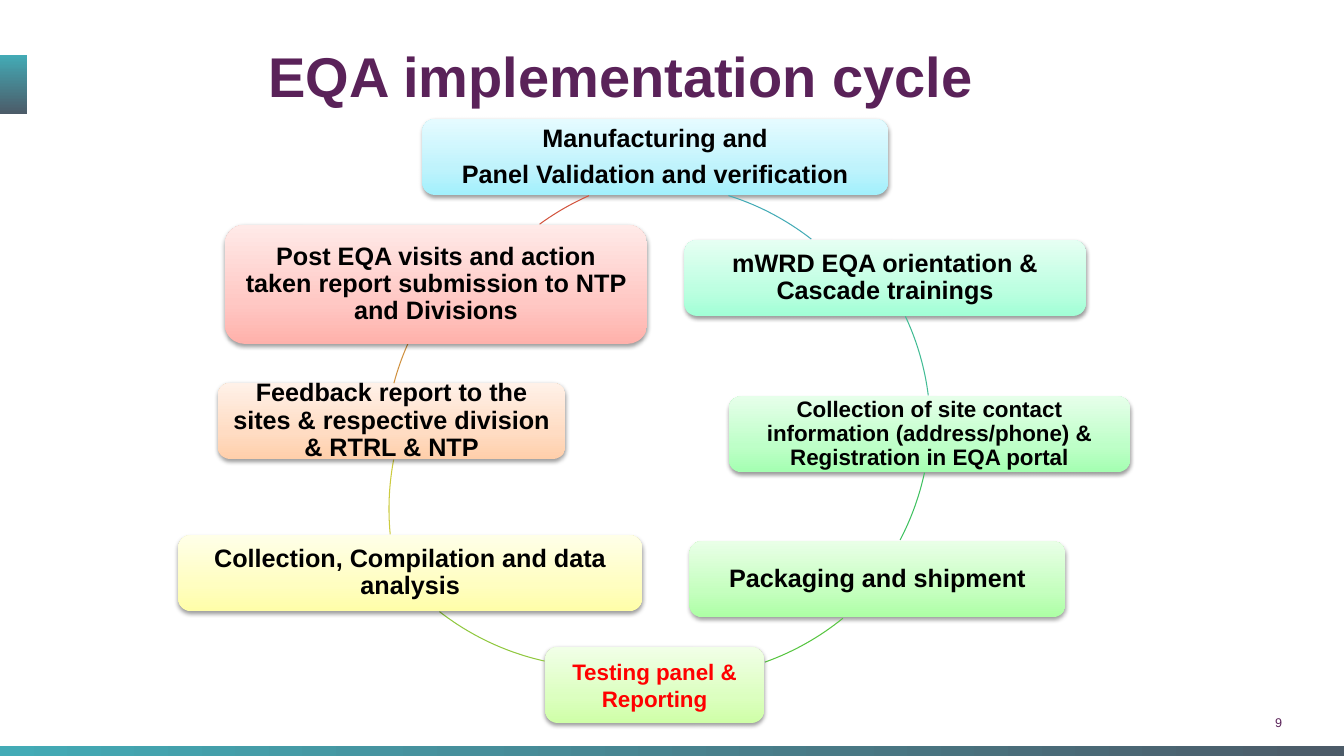
from copy import deepcopy

from lxml.etree import SubElement
from pptx import Presentation
from pptx.dml.color import RGBColor
from pptx.enum.shapes import MSO_SHAPE
from pptx.enum.text import MSO_ANCHOR, MSO_AUTO_SIZE, PP_ALIGN
from pptx.oxml.ns import qn
from pptx.util import Pt

PURPLE = RGBColor(0x5A, 0x22, 0x59)
TEAL = RGBColor(0x43, 0xAB, 0xB6)
SLATE = RGBColor(0x4C, 0x5B, 0x68)
BLACK = RGBColor(0x00, 0x00, 0x00)
RED = RGBColor(0xFF, 0x00, 0x00)

AQUA_FILL = [RGBColor(0xA2, 0xF0, 0xFC), RGBColor(0xBF, 0xF3, 0xFC), RGBColor(0xE5, 0xFB, 0xFF)]
MINT_FILL = [RGBColor(0xA2, 0xFF, 0xD6), RGBColor(0xBD, 0xFF, 0xE1), RGBColor(0xE6, 0xFF, 0xF3)]
GREEN_FILL = [RGBColor(0xA4, 0xFF, 0xB1), RGBColor(0xBE, 0xFF, 0xC8), RGBColor(0xE6, 0xFF, 0xEA)]
LEAF_FILL = [RGBColor(0xAD, 0xFF, 0xA5), RGBColor(0xC5, 0xFF, 0xBF), RGBColor(0xE9, 0xFF, 0xE7)]
LIME_FILL = [RGBColor(0xCF, 0xFF, 0xA7), RGBColor(0xDC, 0xFF, 0xC0), RGBColor(0xF1, 0xFF, 0xE7)]
YELLOW_FILL = [RGBColor(0xFF, 0xFE, 0xA8), RGBColor(0xFF, 0xFE, 0xC1), RGBColor(0xFF, 0xFF, 0xE8)]
ORANGE_FILL = [RGBColor(0xFF, 0xCF, 0xAA), RGBColor(0xFF, 0xDC, 0xC3), RGBColor(0xFF, 0xF1, 0xE8)]
ROSE_FILL = [RGBColor(0xFF, 0xB1, 0xAB), RGBColor(0xFF, 0xC8, 0xC4), RGBColor(0xFF, 0xEA, 0xE8)]

SEA_LINE = RGBColor(0x41, 0xBC, 0x94)
GREEN_LINE = RGBColor(0x3F, 0xC1, 0x60)
LEAF_LINE = RGBColor(0x56, 0xC5, 0x3F)
LIME_LINE = RGBColor(0x90, 0xC8, 0x3F)
YELLOW_LINE = RGBColor(0xCC, 0xCB, 0x3F)
ORANGE_LINE = RGBColor(0xD0, 0x91, 0x3F)
ROSE_LINE = RGBColor(0xD3, 0x55, 0x3F)

STAGE_HEIGHT = 54.3
STAGE_STOPS = (0, 0.35, 1)
RING_SIZE = 377.3

STAGES = [
    ("Manufacturing and\nPanel Validation and verification",
     (301.7, 85, 332.6, STAGE_HEIGHT), AQUA_FILL, {}),
    ("mWRD EQA orientation & Cascade trainings",
     (488.9, 171.4, 286.6, STAGE_HEIGHT), MINT_FILL, {}),
    ("Collection of site contact information (address/phone) & Registration in EQA portal",
     (520.6, 283, 286.6, STAGE_HEIGHT), GREEN_FILL, {"size": 16}),
    ("Packaging and shipment",
     (492.5, 386.6, 268.6, STAGE_HEIGHT), LEAF_FILL, {}),
    ("Testing panel & Reporting",
     (389.5, 462.2, 156.2, STAGE_HEIGHT), LIME_FILL, {"size": 16, "color": RED, "spacing": 1.0}),
    ("Collection, Compilation and data analysis",
     (127.4, 382.3, 331.2, STAGE_HEIGHT), YELLOW_FILL, {}),
    ("Feedback report to the sites & respective division & RTRL & NTP",
     (155.5, 273.6, 248.4, STAGE_HEIGHT), ORANGE_FILL, {}),
    ("Post EQA visits and action taken report submission to NTP and Divisions",
     (160.6, 160.6, 301.7, 85), ROSE_FILL, {}),
]

ARCS = [
    (275, 131, 287.5, 307.9, TEAL),
    (287.3, 117.4, 334.9, 352.8, SEA_LINE),
    (287.3, 109.4, 12.1, 27.7, GREEN_LINE),
    (294.5, 106.6, 50.9, 70.4, LEAF_LINE),
    (241.2, 99.4, 102.5, 127.9, LIME_LINE),
    (277.9, 175, 174.5, 190.8, YELLOW_LINE),
    (275, 133.9, 195, 204.1, ORANGE_LINE),
    (308.2, 123.8, 233.8, 246.2, ROSE_LINE),
]


class CycleSlide:
    """Draws the parts of a cycle diagram on one slide in a shared style."""

    font_name = "Arial"

    def __init__(self, slide):
        self.slide = slide

    def set_text(self, frame, text, size, color, align, bold=True, spacing=1.0, after=0):
        frame.text = text
        for paragraph in frame.paragraphs:
            paragraph.alignment = align
            paragraph.line_spacing = spacing
            paragraph.space_after = Pt(after)
            font = paragraph.font
            font.name, font.size, font.bold = self.font_name, Pt(size), bold
            font.color.rgb = color

    def inset(self, frame, margin):
        frame.margin_left = frame.margin_right = Pt(margin)
        frame.margin_top = frame.margin_bottom = Pt(margin)

    def title(self, text, box):
        heading = self.slide.shapes.title
        heading.left, heading.top, heading.width, heading.height = map(Pt, box)
        frame = heading.text_frame
        frame.auto_size = MSO_AUTO_SIZE.NONE
        frame.vertical_anchor = MSO_ANCHOR.MIDDLE
        self.inset(frame, 7.2)
        self.set_text(frame, text, 40, PURPLE, PP_ALIGN.CENTER)

    def page_number(self, text, box):
        frame = self.slide.shapes.add_textbox(*map(Pt, box)).text_frame
        frame.word_wrap = False
        self.inset(frame, 0)
        self.set_text(frame, text, 9, PURPLE, PP_ALIGN.RIGHT, bold=False)

    def gradient_shape(self, preset, box, positions, colors, angle):
        shape = self.slide.shapes.add_shape(preset, *map(Pt, box))
        shape.shadow.inherit = False
        shape.line.fill.background()
        shape.fill.gradient()
        shape.fill.gradient_angle = angle
        stop_list = shape._element.spPr.find(".//" + qn("a:gsLst"))
        while len(stop_list) < len(colors):
            stop_list.append(deepcopy(stop_list[0]))
        for stop, position, color in zip(shape.fill.gradient_stops, positions, colors):
            stop.position = position
            stop.color.rgb = color
        return shape

    def accent(self, box, angle):
        self.gradient_shape(MSO_SHAPE.RECTANGLE, box, (0, 1), (TEAL, SLATE), angle)

    def stage(self, text, box, colors, size=18, color=BLACK, spacing=0.9):
        shape = self.gradient_shape(MSO_SHAPE.ROUNDED_RECTANGLE, box, STAGE_STOPS, colors, 90)
        effects = shape._element.spPr.find(qn("a:effectLst"))
        shadow = SubElement(effects, qn("a:outerShdw"), blurRad=str(Pt(3.1)),
                            dist=str(Pt(1.6)), dir="5400000", rotWithShape="0")
        tint = SubElement(shadow, qn("a:srgbClr"), val="000000")
        SubElement(tint, qn("a:alpha"), val="38000")
        frame = shape.text_frame
        frame.word_wrap = True
        frame.vertical_anchor = MSO_ANCHOR.MIDDLE
        self.inset(frame, 8)
        self.set_text(frame, text, size, color, PP_ALIGN.CENTER, spacing=spacing, after=6.3)

    def arc(self, left, top, start, end, color):
        arc = self.slide.shapes.add_shape(
            MSO_SHAPE.ARC, Pt(left), Pt(top), Pt(RING_SIZE), Pt(RING_SIZE))
        arc.shadow.inherit = False
        arc.fill.background()
        arc.line.color.rgb = color
        arc.line.width = Pt(0.75)
        for index, degrees in enumerate((start, end)):
            arc.adjustments[index] = degrees * 0.6


def main():
    presentation = Presentation()
    presentation.slide_width, presentation.slide_height = Pt(960), Pt(540)
    cycle = CycleSlide(presentation.slides.add_slide(presentation.slide_layouts[5]))
    cycle.page_number("9", (897.1, 510.5, 18.7, 10.8))
    cycle.accent((0, 39, 19.4, 42.5), 270)
    cycle.accent((0, 532.8, 960, 7.2), 0)
    cycle.title("EQA implementation cycle", (85, 21.6, 716.4, 63.4))
    for (text, box, colors, style), arc in zip(STAGES, ARCS):
        cycle.stage(text, box, colors, **style)
        cycle.arc(*arc)
    presentation.save("out.pptx")


if __name__ == "__main__":
    main()
